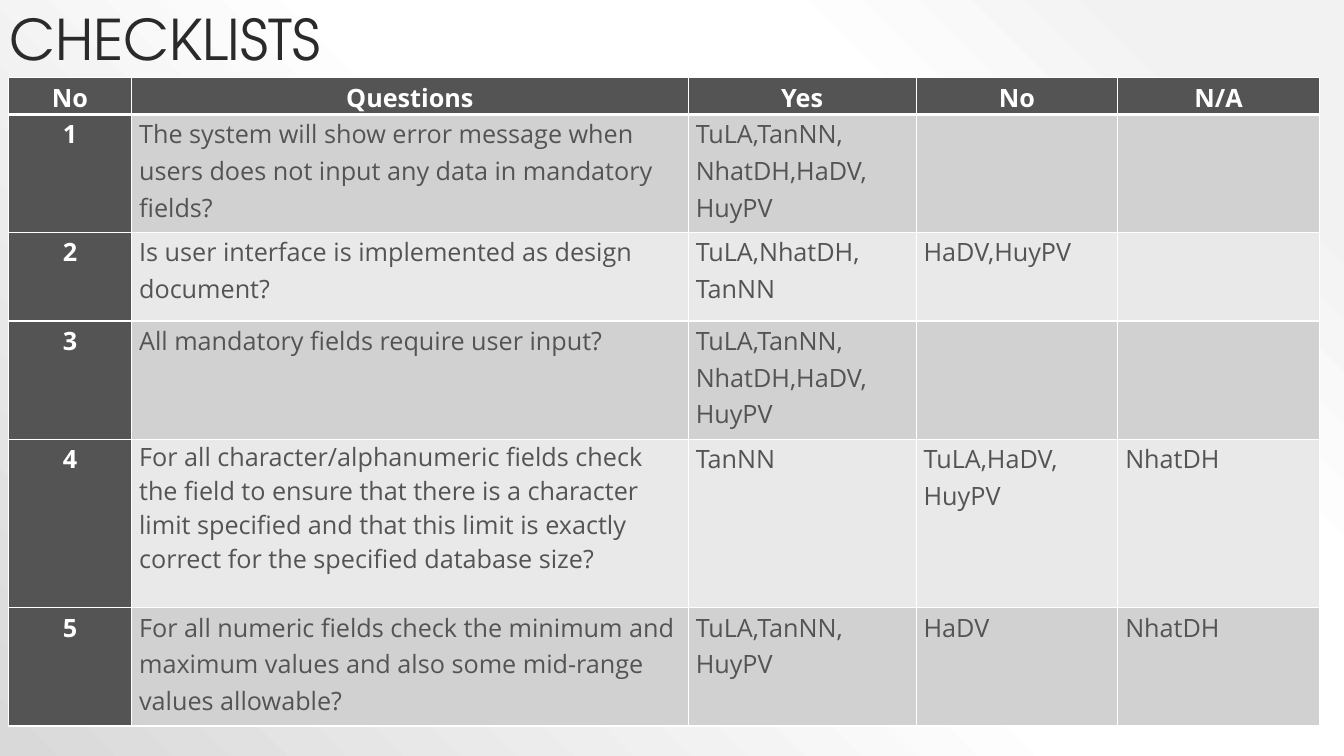
from pptx import Presentation
from pptx.dml.color import RGBColor
from pptx.enum.text import MSO_ANCHOR, PP_ALIGN
from pptx.oxml import parse_xml
from pptx.oxml.ns import nsdecls, qn
from pptx.util import Pt

WHITE = "FFFFFF"
DARK_GREY = "545454"
TITLE_GREY = "2A2A2A"
BAND_FILLS = ("D1D1D1", "E9E9E9")
BACKGROUND_STOPS = ((10, "F2F2F2"), (28, WHITE), (48, WHITE), (100, "D9D9D9"))

COLUMN_WIDTHS = (88, 397.6, 162.8, 144, 144)
ROW_HEIGHTS = (26.2, 84.4, 63.2, 84.4, 120.4, 84.4)
HEADINGS = ("No", "Questions", "Yes", "No", "N/A")
EVERYONE = "TuLA,TanNN,\nNhatDH,HaDV,\nHuyPV"
# Question, line spacing of the question, then the Yes, No and N/A answers
CHECKS = (
    ("The system will show error message when users does not input any data "
     "in mandatory fields?", 1.07, EVERYONE, "", ""),
    ("Is user interface is implemented as design document?", 1.07,
     "TuLA,NhatDH,\nTanNN", "HaDV,HuyPV", ""),
    ("All mandatory fields require user input?", 1.07, EVERYONE, "", ""),
    ("For all character/alphanumeric fields check the field to ensure that "
     "there is a character limit specified and that this limit is exactly "
     "correct for the specified database size?", 1.0,
     "TanNN", "TuLA,HaDV,\nHuyPV", "NhatDH"),
    ("For all numeric fields check the minimum and maximum values and also "
     "some mid-range values allowable?", 1.07,
     "TuLA,TanNN,\nHuyPV", "HaDV", "NhatDH"),
)


def rgb(color):
    return RGBColor.from_string(color)


def set_background(slide):
    """Fill the background with a circular gradient centred at the top right."""
    slide.background.fill.gradient()
    gradient = slide.element.find(".//" + qn("a:gradFill"))
    stops = "".join(
        f'<a:gs pos="{position * 1000}"><a:srgbClr val="{color}"/></a:gs>'
        for position, color in BACKGROUND_STOPS)
    gradient.getparent().replace(gradient, parse_xml(
        f'<a:gradFill {nsdecls("a")} rotWithShape="1"><a:gsLst>{stops}</a:gsLst>'
        '<a:path path="circle"><a:fillToRect l="100000" b="100000"/></a:path>'
        '</a:gradFill>'))


def add_title(slide, left, top, width, height):
    frame = slide.shapes.add_textbox(
        Pt(left), Pt(top), Pt(width), Pt(height)).text_frame
    frame.word_wrap = True
    frame.vertical_anchor = MSO_ANCHOR.BOTTOM
    paragraph = frame.paragraphs[0]
    paragraph.text = "CHECKLISTS"
    paragraph.line_spacing = 0.9
    paragraph.font.size = Pt(40)
    paragraph.font.name = "TeX Gyre Adventor"
    paragraph.font.color.rgb = rgb(TITLE_GREY)


def set_borders(cell, top, bottom):
    """Draw white borders, 1 pt at the sides and as given above and below."""
    properties = cell._tc.get_or_add_tcPr()
    for side, width in (("L", 1), ("R", 1), ("T", top), ("B", bottom)):
        properties.append(parse_xml(
            f'<a:ln{side} {nsdecls("a")} w="{Pt(width)}"><a:solidFill>'
            f'<a:srgbClr val="{WHITE}"/></a:solidFill></a:ln{side}>'))


def fill_cell(cell, text, fill, emphasis, spacing=1.07):
    """Write one cell; emphasis gives the bold, centred, white look."""
    cell.margin_left = cell.margin_right = Pt(5.4)
    cell.margin_top = cell.margin_bottom = 0
    cell.fill.solid()
    cell.fill.fore_color.rgb = rgb(fill)
    cell.text = text
    for paragraph in cell.text_frame.paragraphs:
        paragraph.alignment = PP_ALIGN.CENTER if emphasis else PP_ALIGN.LEFT
        paragraph.line_spacing = spacing
        paragraph.font.size = Pt(18)
        paragraph.font.name = "Open Sans"
        paragraph.font.bold = emphasis
        paragraph.font.color.rgb = rgb(WHITE if emphasis else DARK_GREY)


def add_checklist(slide, left, top):
    table = slide.shapes.add_table(
        len(ROW_HEIGHTS), len(COLUMN_WIDTHS), Pt(left), Pt(top),
        Pt(sum(COLUMN_WIDTHS)), Pt(sum(ROW_HEIGHTS))).table
    for column, width in zip(table.columns, COLUMN_WIDTHS):
        column.width = Pt(width)
    for index, (row, height) in enumerate(zip(table.rows, ROW_HEIGHTS)):
        row.height = Pt(height)
        for cell in row.cells:
            set_borders(cell, top=3 if index == 1 else 1,
                        bottom=3 if index == 0 else 1)

    for column, heading in enumerate(HEADINGS):
        cell = table.cell(0, column)
        fill_cell(cell, heading, DARK_GREY, True)
        cell.vertical_anchor = MSO_ANCHOR.MIDDLE
    for number, (question, spacing, *answers) in enumerate(CHECKS, start=1):
        band = BAND_FILLS[(number - 1) % 2]
        fill_cell(table.cell(number, 0), str(number), DARK_GREY, True)
        fill_cell(table.cell(number, 1), question, band, False, spacing)
        for column, answer in enumerate(answers, start=2):
            fill_cell(table.cell(number, column), answer, band, False)


def main():
    presentation = Presentation()
    presentation.slide_width = Pt(960)
    presentation.slide_height = Pt(540)
    slide = presentation.slides.add_slide(presentation.slide_layouts[6])
    set_background(slide)
    add_title(slide, 0, 1.4, 522, 54)
    add_checklist(slide, 6, 55.6)
    presentation.save("out.pptx")


if __name__ == "__main__":
    main()
